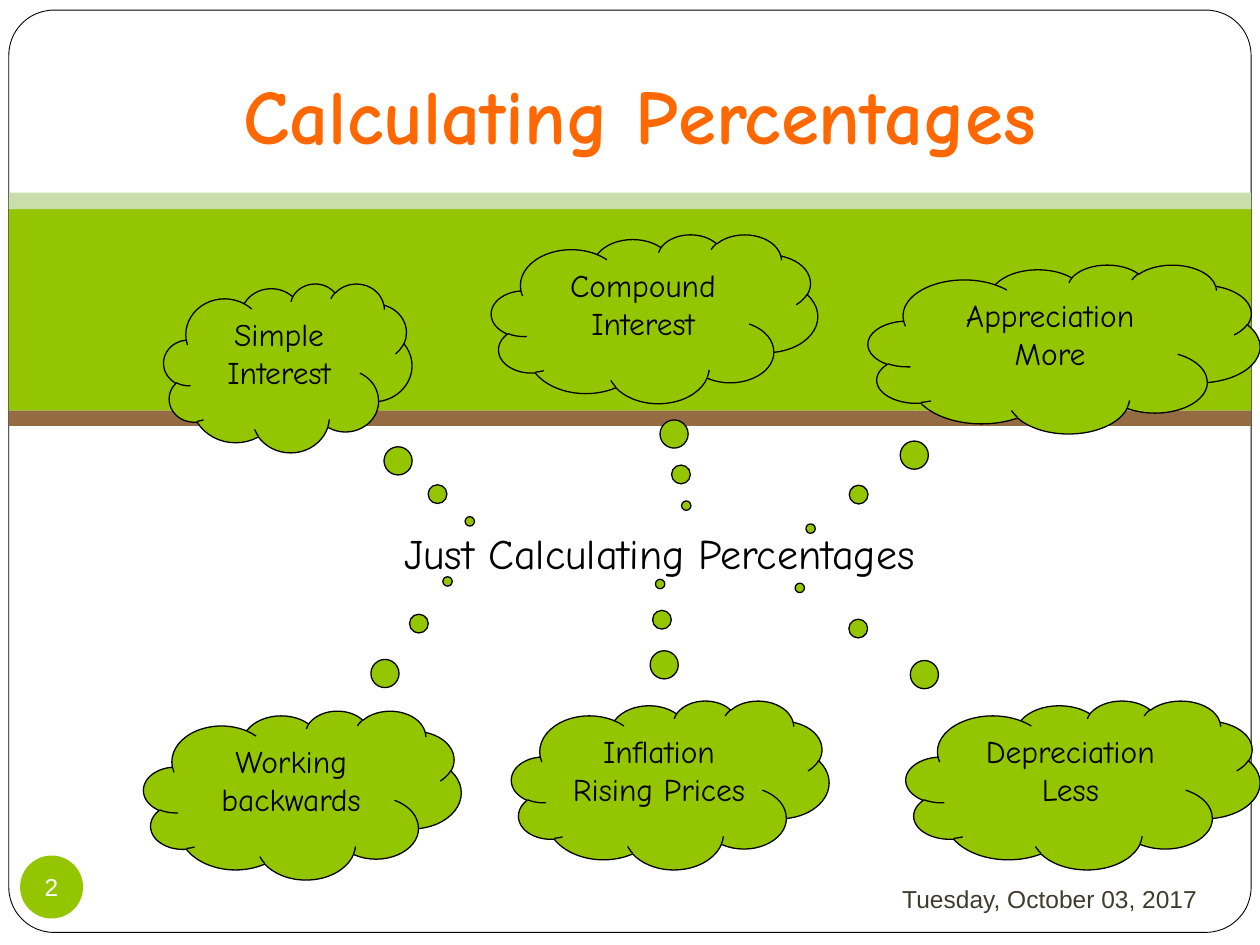
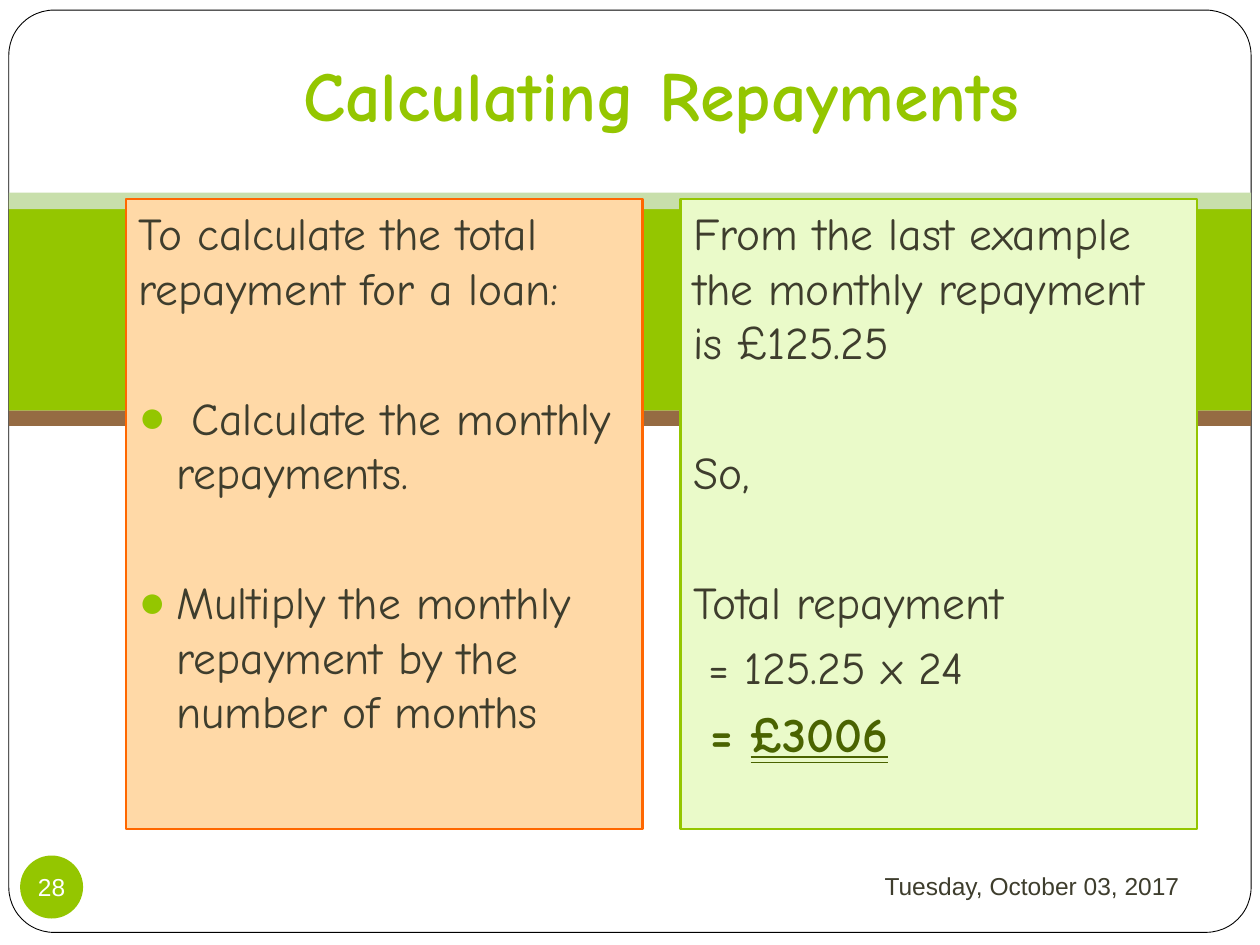
from lxml import etree
from pptx import Presentation, util as u
from pptx.dml.color import RGBColor
from pptx.enum import shapes, text
from pptx.oxml.ns import qn

GREEN = RGBColor(0x94, 0xC6, 0x00)
PALE_GREEN = RGBColor(0xC8, 0xDF, 0xAB)
MINT = RGBColor(0xEA, 0xFA, 0xC9)
DARK_GREEN = RGBColor(0x4A, 0x63, 0x00)
ORANGE = RGBColor(0xFF, 0x67, 0x00)
PEACH = RGBColor(0xFF, 0xD9, 0xA7)
BROWN = RGBColor(0x95, 0x6B, 0x43)
INK = RGBColor(0x3E, 0x3D, 0x2D)
BLACK = RGBColor(0, 0, 0)
WHITE = RGBColor(0xFF, 0xFF, 0xFF)

HAND, PLAIN = "Comic Neue", "Arial"
WIDTH, HEIGHT = u.Inches(10), u.Inches(7.5)
COL, ROW = WIDTH / 100, HEIGHT / 75
SHAPE, ALIGN, ANCHOR = shapes.MSO_SHAPE, text.PP_ALIGN, text.MSO_ANCHOR
DATE = "Tuesday, October 03, 2017"
BULLET_INDENT = u.Inches(0.3)
PARA_GAP, SECTION_GAP = 5.8, 43

DATE_FONT = dict(name=PLAIN, size=u.Pt(14), color=INK)
NUMBER_FONT = dict(DATE_FONT, color=WHITE)
CLOUD_FONT = dict(name=HAND, size=u.Pt(18), color=BLACK)
HUB_FONT = dict(CLOUD_FONT, size=u.Pt(24))
BODY_FONT = dict(name=HAND, size=u.Pt(26), color=INK)
ANSWER_FONT = dict(name=HAND, size=u.Pt(28), color=DARK_GREEN, bold=True)
TOTAL_FONT = dict(ANSWER_FONT, underline=text.MSO_UNDERLINE.DOUBLE_LINE)


def grid(left, top, width, height):
    """Turn columns and rows into slide lengths."""
    return [round(n * step) for n, step in zip((left, top, width, height), (COL, ROW) * 2)]


def place(sp, box):
    for name, value in zip(("left", "top", "width", "height"), grid(*box)):
        setattr(sp, name, value)


def apply(target, values):
    for name, value in values.items():
        if name == "color":
            target.color.rgb = value
        else:
            setattr(target, name, value)


def paint(sp, fill, line=None, weight=0):
    sp.fill.solid()
    sp.fill.fore_color.rgb = fill
    if line is None:
        sp.line.fill.background()
    else:
        sp.line.color.rgb = line
        sp.line.width = u.Pt(weight)


def draw(s, kind, box, fill, line=None, weight=0, adjust=()):
    sp = s.shapes.add_shape(kind, *grid(*box))
    sp.shadow.inherit = False
    paint(sp, fill, line, weight)
    for i, value in enumerate(adjust):
        sp.adjustments[i] = value
    return sp


def write(tf, lines, font, align=ALIGN.LEFT, **frame):
    apply(tf, dict(dict(word_wrap=True, auto_size=text.MSO_AUTO_SIZE.NONE), **frame))
    for i, line in enumerate(lines):
        p = tf.paragraphs[0] if i == 0 else tf.add_paragraph()
        p.alignment = align
        add_run(p, line, font)


def add_run(p, words, font):
    r = p.add_run()
    r.text = words
    apply(r.font, font)


def backdrop(s):
    """Draw the framed page and its bands behind the placeholders."""
    left, width = 0.7, 98.6
    draw(s, SHAPE.ROUNDED_RECTANGLE, (left, 0.8, width, 73.2), WHITE, BLACK, 0.5, [0.049])
    for top, height, fill in ((15.9, 16.7, GREEN), (15.3, 1.3, PALE_GREEN), (32.6, 1.2, BROWN)):
        draw(s, SHAPE.RECTANGLE, (left, top, width, height), fill)
    for ph in list(s.placeholders):
        s.shapes.element.append(ph.element)


def title(s, words, box, size, color):
    sp = s.shapes.title
    place(sp, box)
    write(sp.text_frame, [words], dict(name=HAND, size=u.Pt(size), color=color, bold=True),
          ALIGN.CENTER, vertical_anchor=ANCHOR.MIDDLE)
    return sp


def footer(s, number, date_left, date_top):
    tb = s.shapes.add_textbox(*grid(date_left, date_top, 27.1, 5.2))
    write(tb.text_frame, [DATE], DATE_FONT, ALIGN.RIGHT, vertical_anchor=ANCHOR.MIDDLE)
    badge = draw(s, SHAPE.OVAL, (1.6, 67.9, 5, 5), GREEN)
    margins = {f"margin_{side}": 0 for side in ("left", "top", "right", "bottom")}
    write(badge.text_frame, [str(number)], NUMBER_FONT, ALIGN.CENTER,
          vertical_anchor=ANCHOR.MIDDLE, word_wrap=False, **margins)


def thought_cloud(s, lines, box, tail):
    sp = draw(s, SHAPE.CLOUD_CALLOUT, box, GREEN, BLACK, 0.75, tail)
    write(sp.text_frame, lines, CLOUD_FONT, ALIGN.CENTER, vertical_anchor=ANCHOR.TOP)


def set_bullet(p, shown):
    pPr = p._p.get_or_add_pPr()
    indent = BULLET_INDENT if shown else 0
    pPr.set("marL", str(indent))
    pPr.set("indent", str(-indent))
    if not shown:
        etree.SubElement(pPr, qn("a:buNone"))
        return
    color = etree.SubElement(pPr, qn("a:buClr"))
    etree.SubElement(color, qn("a:srgbClr"), val=str(GREEN))
    etree.SubElement(pPr, qn("a:buFont"), typeface=PLAIN)
    etree.SubElement(pPr, qn("a:buChar"), char="●")


def panel(ph, box, fill, line, paragraphs):
    """Fill a body placeholder; each paragraph is (runs, space before, bulleted)."""
    place(ph, box)
    paint(ph, fill, line, 1.5)
    tf = ph.text_frame
    write(tf, [], BODY_FONT, vertical_anchor=ANCHOR.TOP)
    for i, (runs, gap, bulleted) in enumerate(paragraphs):
        p = tf.paragraphs[0] if i == 0 else tf.add_paragraph()
        apply(p, dict(alignment=ALIGN.LEFT, space_before=u.Pt(gap)))
        set_bullet(p, bulleted)
        for words, font in runs:
            add_run(p, words, font)


def body(words, gap=PARA_GAP, bulleted=False):
    return [(words, BODY_FONT)], gap, bulleted


def percentages_slide(prs):
    s = prs.slides.add_slide(prs.slide_layouts[5])
    backdrop(s)
    title(s, "Calculating Percentages", (11.4, 2.8, 78.8, 12.5), 44, ORANGE)
    hub = s.shapes.add_textbox(*grid(31.1, 41.4, 46.8, 5))
    write(hub.text_frame, ["Just Calculating Percentages"], HUB_FONT, word_wrap=False,
          auto_size=text.MSO_AUTO_SIZE.SHAPE_TO_FIT_TEXT)
    clouds = (
        (["Simple Interest"], 13, 22.5, 19.7, (0.733, 0.909)),
        (["Compound Interest"], 39, 18.6, 25.9, (0.097, 1.107)),
        (["Appreciation", "More"], 68.9, 21, 31.1, (-0.647, 1.064)),
        (["Depreciation", "Less"], 71.9, 55.6, 28.1, (-0.8, -1.167)),
        (["Inflation", "Rising Prices"], 40.6, 55.6, 25.2, (-0.032, -1.19)),
        (["Working", "backwards"], 11.4, 56.4, 25.2, (0.457, -1.265)),
    )
    for lines, left, top, width, tail in clouds:
        thought_cloud(s, lines, (left, top, width, 13.4), tail)
    footer(s, 2, 68.9, 68.7)


def repayments_slide(prs):
    s = prs.slides.add_slide(prs.slide_layouts[3])
    backdrop(s)
    heading = title(s, "Calculating Repayments", (10, 3, 85, 9.3), 40, GREEN)
    heading.text_frame.margin_bottom = u.Inches(0.1)
    method = [
        body("To calculate the total repayment for a loan:"),
        body(" Calculate the monthly repayments.", SECTION_GAP, True),
        body("Multiply the monthly repayment by the number of months", SECTION_GAP, True),
    ]
    example = [
        body("From the last example the monthly repayment is £125.25"),
        body("So,", SECTION_GAP),
        body("Total repayment", SECTION_GAP),
        body(" = 125.25 x 24"),
        ([(" = ", ANSWER_FONT), ("£3006", TOTAL_FONT)], PARA_GAP, False),
    ]
    panels = ((PEACH, ORANGE, method), (MINT, GREEN, example))
    width, gutter = 41, 3
    for i, (fill, line, paragraphs) in enumerate(panels):
        box = (10 + i * (width + gutter), 15.8, width, 50)
        panel(s.placeholders[i + 1], box, fill, line, paragraphs)
    footer(s, 28, 67.5, 67.7)


def main():
    prs = Presentation()
    prs.slide_width, prs.slide_height = WIDTH, HEIGHT
    percentages_slide(prs)
    repayments_slide(prs)
    prs.save("out.pptx")


if __name__ == "__main__":
    main()
